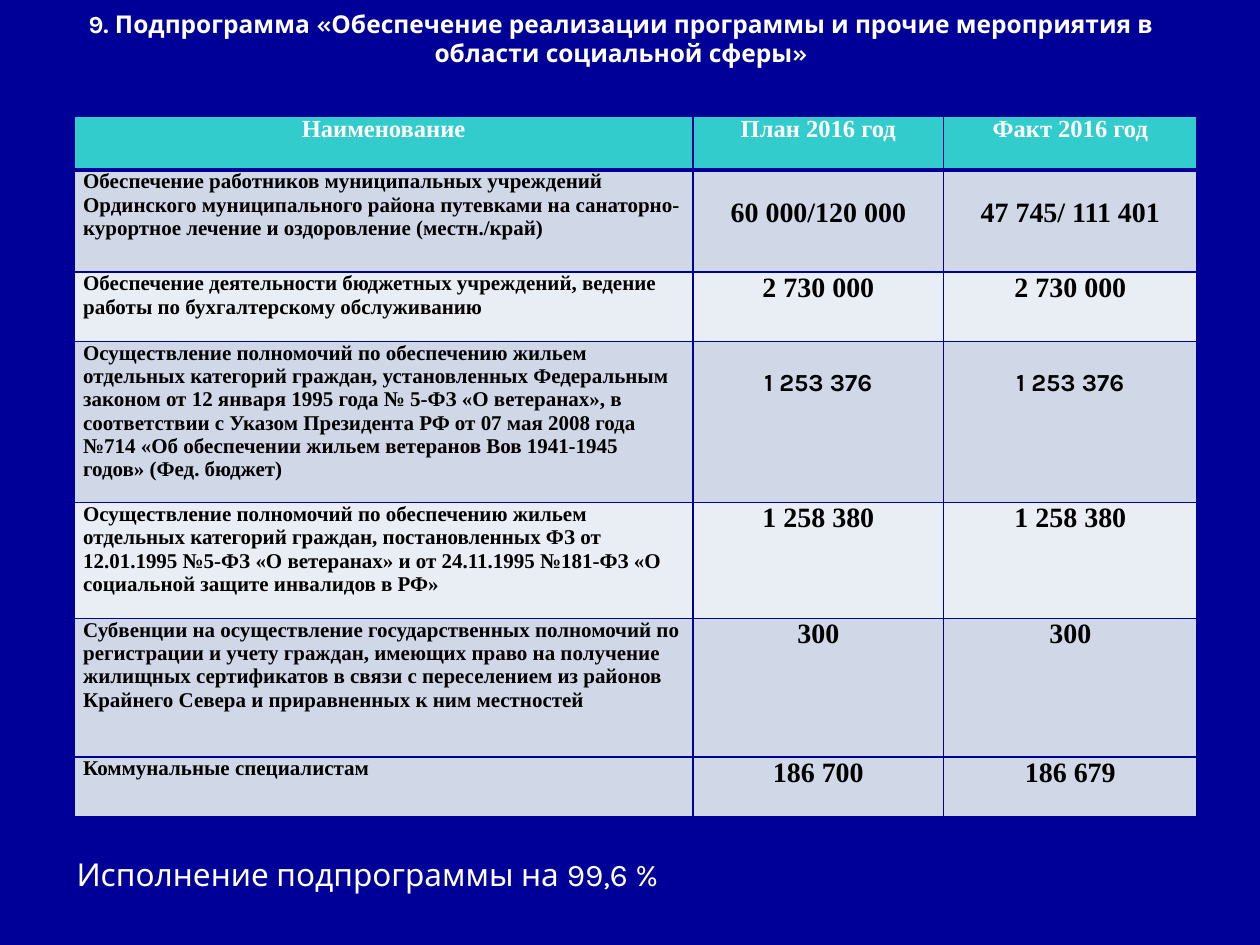
"""Build the slide on the social sphere subprogramme and its 2016 figures."""
from lxml.etree import SubElement
from pptx import Presentation
from pptx.dml.color import RGBColor
from pptx.enum.text import MSO_ANCHOR as Anchor, PP_ALIGN as Align
from pptx.oxml.ns import qn
from pptx.util import Inches, Pt

NAVY = RGBColor(0x00, 0x00, 0x99)
TEAL = RGBColor(0x33, 0xCC, 0xCC)
BLUE_GREY = RGBColor(0xD0, 0xD8, 0xE8)
PALE_GREY = RGBColor(0xE9, 0xED, 0xF4)
WHITE = RGBColor(0xFF, 0xFF, 0xFF)
BLACK = RGBColor(0x00, 0x00, 0x00)
SANS, SERIF = "Karla", "Times New Roman"


def write_text(frame, text, color, alignment, font_format):
    frame.word_wrap = True
    paragraph = frame.paragraphs[0]
    paragraph.alignment = alignment
    run = paragraph.add_run()
    run.text = text
    run.font.color.rgb = color
    for name, value in font_format.items():
        setattr(run.font, name, value)


def add_border(cell, side, width):
    properties = cell._tc.get_or_add_tcPr()
    line = SubElement(properties, qn(f"a:ln{side}"), w=str(Pt(width)))
    fill = SubElement(line, qn("a:solidFill"))
    SubElement(fill, qn("a:srgbClr"), val=str(NAVY))


presentation = Presentation()
presentation.slide_width = Inches(10)
presentation.slide_height = Inches(7.5)
slide = presentation.slides.add_slide(presentation.slide_layouts[6])
slide.background.fill.solid()
slide.background.fill.fore_color.rgb = NAVY

title = slide.shapes.add_textbox(Inches(0.43), Inches(0), Inches(9), Inches(0.84))
title.text_frame.vertical_anchor = Anchor.MIDDLE
title.text_frame.margin_bottom = Inches(0.28)
write_text(
    title.text_frame,
    "9. Подпрограмма «Обеспечение реализации программы и прочие мероприятия в области социальной сферы»",
    WHITE, Align.CENTER, {"name": SANS, "size": Pt(14), "bold": True},
)

HEADER = {"name": SERIF, "size": Pt(14), "bold": True}
LABEL = {"name": SERIF, "size": Pt(12), "bold": True}
AMOUNT = {"name": SERIF, "size": Pt(16), "bold": True}
SANS_AMOUNT = {"name": SANS, "size": Pt(14), "bold": True}

rows = [
    (0.43, TEAL, HEADER, 0, ("Наименование", "План 2016 год", "Факт 2016 год")),
    (0.81, BLUE_GREY, AMOUNT, 0.22, (
        "Обеспечение работников муниципальных учреждений Ординского муниципального района "
        "путевками на санаторно-курортное лечение и оздоровление (местн./край)",
        "60 000/120 000", "47 745/ 111 401")),
    (0.55, PALE_GREY, AMOUNT, 0, (
        "Обеспечение деятельности бюджетных учреждений, ведение работы по бухгалтерскому обслуживанию",
        "2 730 000", "2 730 000")),
    (1.28, BLUE_GREY, SANS_AMOUNT, 0.22, (
        "Осуществление полномочий по обеспечению жильем отдельных категорий граждан, "
        "установленных Федеральным законом от 12 января 1995 года № 5-ФЗ «О ветеранах», "
        "в соответствии с Указом Президента РФ от 07 мая 2008 года №714 "
        "«Об обеспечении жильем ветеранов Вов 1941-1945 годов» (Фед. бюджет)",
        "1 253 376", "1 253 376")),
    (0.92, PALE_GREY, AMOUNT, 0, (
        "Осуществление полномочий по обеспечению жильем отдельных категорий граждан, "
        "постановленных ФЗ от 12.01.1995 №5-ФЗ «О ветеранах» и от 24.11.1995 №181-ФЗ "
        "«О социальной защите инвалидов в РФ»",
        "1 258 380", "1 258 380")),
    (1.1, BLUE_GREY, AMOUNT, 0, (
        "Субвенции на осуществление государственных полномочий по регистрации и учету граждан, "
        "имеющих право на получение жилищных сертификатов в связи с переселением "
        "из районов Крайнего Севера и приравненных к ним местностей",
        "300", "300")),
    (0.47, BLUE_GREY, AMOUNT, 0, ("Коммунальные специалистам", "186 700", "186 679")),
]
column_widths = (4.91, 1.99, 2.01)

table = slide.shapes.add_table(
    len(rows), len(column_widths), Inches(0.59), Inches(0.92),
    Inches(sum(column_widths)), Inches(sum(row[0] for row in rows)),
).table
for column, width in zip(table.columns, column_widths):
    column.width = Inches(width)

for row_index, (height, color, amount_format, amount_top, texts) in enumerate(rows):
    table.rows[row_index].height = Inches(height)
    is_header = row_index == 0
    for column_index, text in enumerate(texts):
        cell = table.cell(row_index, column_index)
        is_label = column_index == 0 and not is_header
        cell.margin_left = cell.margin_right = Inches(0.07)
        cell.margin_top = Inches(0 if is_label else amount_top)
        cell.margin_bottom = Inches(0)
        write_text(
            cell.text_frame, text, WHITE if is_header else BLACK,
            Align.LEFT if is_label else Align.CENTER,
            LABEL if is_label else amount_format,
        )
        widths = {"L": 1, "R": 1, "T": 3 if row_index == 1 else 1, "B": 3 if is_header else 1}
        for side, width in widths.items():
            add_border(cell, side, width)
        cell.fill.solid()
        cell.fill.fore_color.rgb = color

summary = slide.shapes.add_textbox(Inches(0.51), Inches(6.74), Inches(8.66), Inches(0.4))
write_text(
    summary.text_frame, "Исполнение подпрограммы на 99,6 %",
    WHITE, Align.LEFT, {"name": SANS, "size": Pt(18)},
)

presentation.save("out.pptx")
